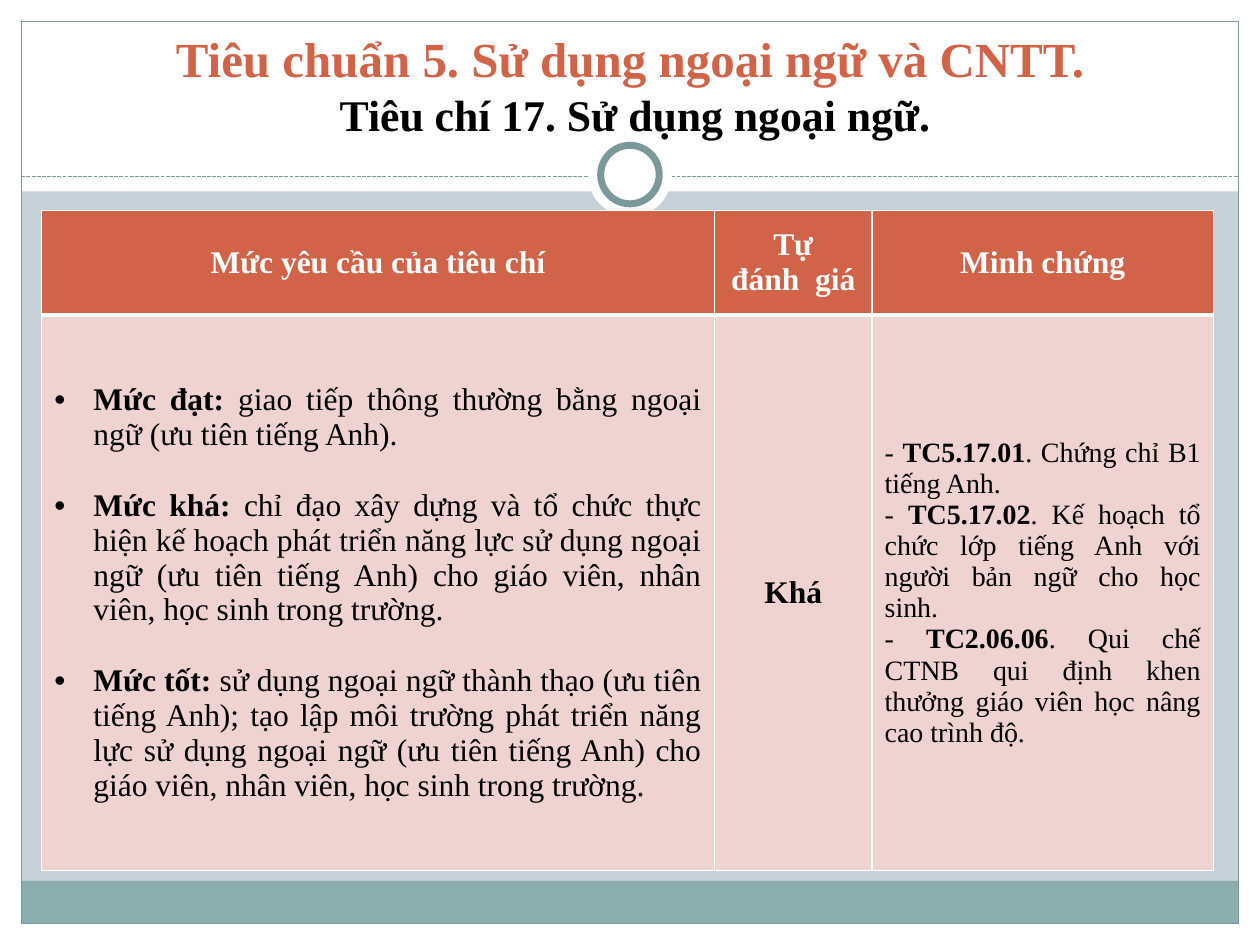
from dataclasses import dataclass

from lxml import etree
from pptx import Presentation
from pptx.dml.color import RGBColor
from pptx.enum.dml import MSO_LINE
from pptx.enum.shapes import MSO_CONNECTOR, MSO_SHAPE
from pptx.enum.text import MSO_ANCHOR, MSO_AUTO_SIZE, PP_ALIGN
from pptx.oxml.ns import qn
from pptx.util import Cm, Pt

RECT, OVAL = MSO_SHAPE.RECTANGLE, MSO_SHAPE.OVAL
STRAIGHT, DASH = MSO_CONNECTOR.STRAIGHT, MSO_LINE.SQUARE_DOT
MIDDLE, BOTTOM = MSO_ANCHOR.MIDDLE, MSO_ANCHOR.BOTTOM
CENTER, JUSTIFY = PP_ALIGN.CENTER, PP_ALIGN.JUSTIFY
FIXED = MSO_AUTO_SIZE.NONE


@dataclass(frozen=True)
class Theme:
    """Hold the colours, font and type sizes."""
    font: str = "Times New Roman"
    ground: str = "C5D1D7"
    white: str = "FFFFFF"
    black: str = "000000"
    teal: str = "7C999A"
    band: str = "8CADAE"
    rust: str = "D16349"
    blush: str = "EED3D0"
    title: int = 28
    sub: int = 25
    body: int = 18
    proof: int = 16
    gap: float = 20.5


THEME = Theme()
HEADS = [["Mức yêu cầu của tiêu chí"], ["Tự", "đánh  giá"], ["Minh chứng"]]
LEVELS = [
    [("Mức đạt: ", True),
     ("giao tiếp thông thường bằng ngoại ngữ (ưu tiên tiếng Anh).", False)],
    [("Mức khá:", True),
     (" chỉ đạo xây dựng và tổ chức thực hiện kế hoạch phát triển năng lực "
      "sử dụng ngoại ngữ (ưu tiên tiếng Anh) cho giáo viên, nhân viên, "
      "học sinh trong trường.", False)],
    [("Mức tốt: ", True),
     ("sử dụng ngoại ngữ thành thạo (ưu tiên tiếng Anh); tạo lập môi trường "
      "phát triển năng lực sử dụng ngoại ngữ (ưu tiên tiếng Anh) cho "
      "giáo viên, nhân viên, học sinh trong trường.", False)],
]
GRADE = [[("Khá", True)]]
PROOFS = [
    [("- ", False), (code, True), (text, False)]
    for code, text in [
        ("TC5.17.01", ". Chứng chỉ B1 tiếng Anh."),
        ("TC5.17.02", ". Kế hoạch tổ chức lớp tiếng Anh với người bản ngữ "
                      "cho học sinh."),
        ("TC2.06.06", ". Qui chế CTNB qui định khen thưởng giáo viên "
                      "học nâng cao trình độ."),
    ]
]


def paint(fill, color):
    """Make a fill solid in the given colour."""
    fill.solid()
    fill.fore_color.rgb = RGBColor.from_string(color)


def add_run(para, text, size, color, bold=True):
    """Add one run in the theme font."""
    run = para.add_run()
    run.text = text
    look = {"name": THEME.font, "size": Pt(size), "bold": bold}
    for key, value in look.items():
        setattr(run.font, key, value)
    run.font.color.rgb = RGBColor.from_string(color)


def add_form(slide, kind, box, fill=None, line=None, width=0.75):
    """Add a flat shape with an optional fill and outline."""
    form = slide.shapes.add_shape(kind, *map(Cm, box))
    form.shadow.inherit = False
    if fill:
        paint(form.fill, fill)
    else:
        form.fill.background()
    if line:
        paint(form.line.fill, line)
        form.line.width = Pt(width)
    else:
        form.line.fill.background()


def draw_frame(slide, box, edge):
    """Draw the white margins, footer band and outline of the page."""
    left, top, wide, high = box
    head, foot = 3.86, 0.86
    for part in [(left, top + high - edge, wide, edge),
                 (left, top, wide, head),
                 (left, top, edge, high),
                 (left + wide - edge, top, edge, high)]:
        add_form(slide, RECT, part, THEME.white)
    inner = (left + edge, top + edge, wide - 2 * edge, high - 2 * edge)
    add_form(slide, RECT, (inner[0], top + high - edge - foot, inner[2], foot),
             THEME.band)
    add_form(slide, RECT, inner, line=THEME.teal)


def draw_rule(slide, box):
    """Draw the dashed rule with a ring at its centre."""
    left, top, wide, high = box
    level = top + high / 2 + 0.04
    rule = slide.shapes.add_connector(
        STRAIGHT, Cm(left), Cm(level), Cm(left + wide), Cm(level))
    paint(rule.line.fill, THEME.teal)
    rule.line.width = Pt(0.75)
    rule.line.dash_style = DASH
    etree.SubElement(rule._element.spPr, qn("a:effectLst"))
    for size, line in [(high, None), (1.18, THEME.teal)]:
        spot = (left + (wide - size) / 2, top + (high - size) / 2, size, size)
        add_form(slide, OVAL, spot, THEME.white, line, 4)


def place_title(slide, box):
    """Move the title and write its two lines."""
    title = slide.shapes.title
    for key, value in zip(("left", "top", "width", "height"), box):
        setattr(title, key, Cm(value))
    frame = title.text_frame
    look = {"auto_size": FIXED, "word_wrap": True, "vertical_anchor": BOTTOM}
    for key, value in look.items():
        setattr(frame, key, value)
    para = frame.paragraphs[0]
    para.alignment = CENTER
    add_run(para, "Tiêu chuẩn 5. Sử dụng ngoại ngữ và CNTT.",
            THEME.title, THEME.rust)
    para.add_line_break()
    add_run(para, " Tiêu chí 17. Sử dụng ngoại ngữ.", THEME.sub, THEME.black)


def add_edges(cell, head):
    """Set white borders, with a thick one under the header."""
    props = cell._tc.get_or_add_tcPr()
    thick = "B" if head else "T"
    for spot, side in enumerate("LRTB"):
        width = Pt(3 if side == thick else 1)
        edge = etree.Element(qn(f"a:ln{side}"), w=str(width))
        fill = etree.SubElement(edge, qn("a:solidFill"))
        etree.SubElement(fill, qn("a:srgbClr"), val=THEME.white)
        props.insert(spot, edge)


def add_bullet(para):
    """Give a paragraph a round bullet and a hanging indent."""
    props = para._p.get_or_add_pPr()
    props.set("marL", str(Cm(0.79)))
    props.set("indent", str(Cm(-0.79)))
    etree.SubElement(props, qn("a:buFont"), typeface="Arial")
    etree.SubElement(props, qn("a:buChar"), char="•")


def fill_cell(cell, lines, size, color, fill, align, listed=False):
    """Write lines of (text, bold) runs into a cell."""
    paint(cell.fill, fill)
    add_edges(cell, fill == THEME.rust)
    cell.vertical_anchor = MIDDLE
    frame = cell.text_frame
    for index, line in enumerate(lines):
        para = frame.add_paragraph() if index else frame.paragraphs[0]
        para.alignment = align
        if listed:
            para.space_before = Pt(THEME.gap if index else 0)
            add_bullet(para)
        for text, bold in line:
            add_run(para, text, size, color, bold)


def place_table(slide, box):
    """Build the table of levels, grade and proofs."""
    wide, high = box[2:]
    grid = slide.shapes.add_table(2, 3, *map(Cm, box)).table
    for col, size in zip(grid.columns, (13.56, 3.18, wide - 16.74)):
        col.width = Cm(size)
    for row, size in zip(grid.rows, (2.11, high - 2.11)):
        row.height = Cm(size)
    for index, head in enumerate(HEADS):
        fill_cell(grid.cell(0, index), [[(text, True)] for text in head],
                  THEME.body, THEME.white, THEME.rust, CENTER)
    for index, (lines, size, align, listed) in enumerate([
            (LEVELS, THEME.body, JUSTIFY, True),
            (GRADE, THEME.body, CENTER, False),
            (PROOFS, THEME.proof, JUSTIFY, False)]):
        fill_cell(grid.cell(1, index), lines, size, THEME.black,
                  THEME.blush, align, listed)


def main():
    """Build and save the slide."""
    deck = Presentation()
    deck.slide_width, deck.slide_height = Cm(25.4), Cm(19.05)
    slide = deck.slides.add_slide(deck.slide_layouts[5])
    paint(slide.background.fill, THEME.ground)
    draw_frame(slide, (0, 0, 25.4, 19.05), 0.43)
    draw_rule(slide, (0.43, 2.67, 24.54, 1.7))
    title = slide.shapes.title._element
    slide.shapes._spTree.append(title)
    place_title(slide, (0.85, 0.2, 23.7, 2.75))
    place_table(slide, (0.84, 4.24, 23.62, 13.31))
    deck.save("out.pptx")


if __name__ == "__main__":
    main()
